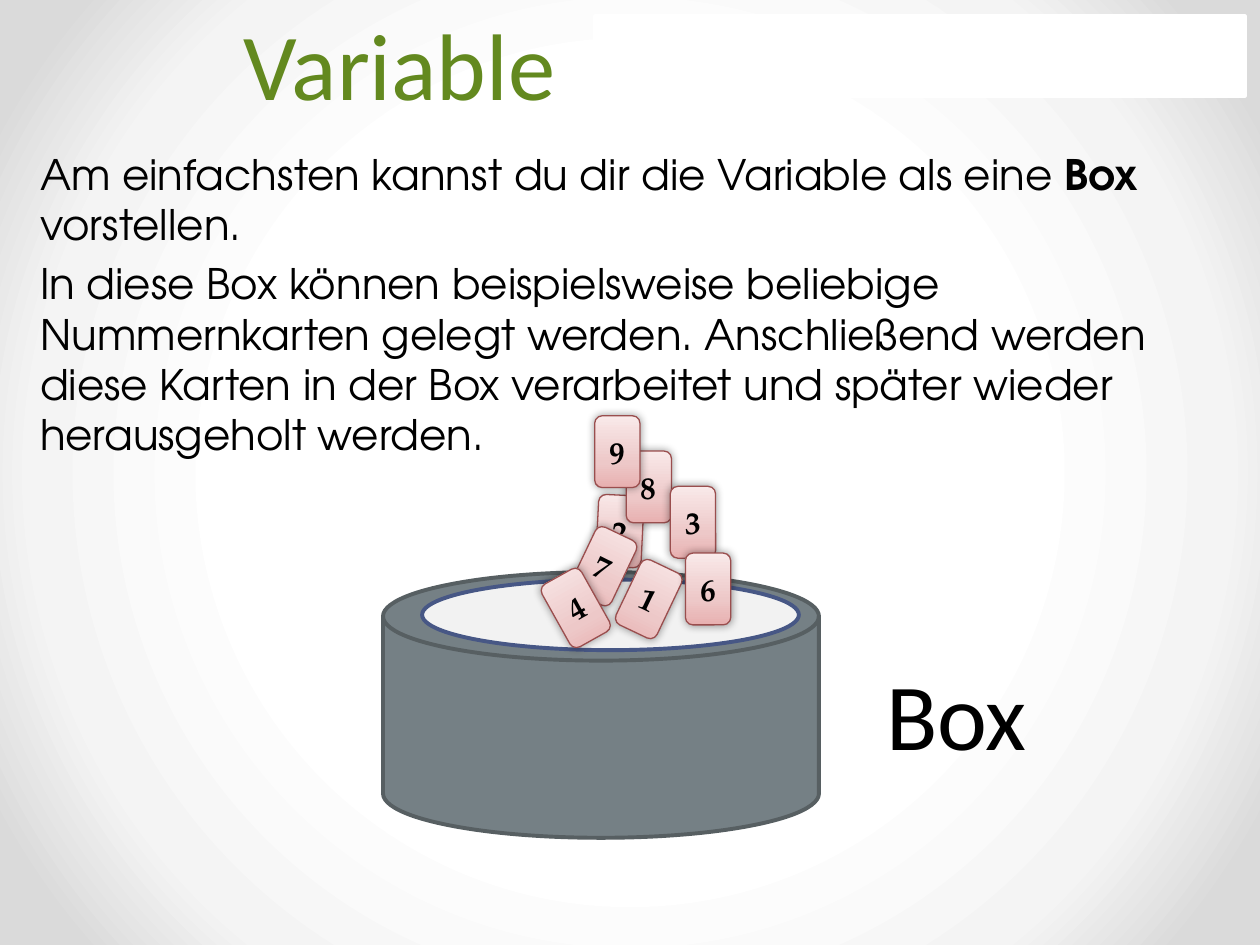
"""Builds a slide that explains a variable as a box of number cards."""
from lxml.etree import SubElement as Sub
from pptx import Presentation
from pptx.dml.color import RGBColor as Rgb
from pptx.enum.shapes import MSO_SHAPE as Form
from pptx.enum.text import MSO_ANCHOR as Anchor, MSO_AUTO_SIZE as Auto, PP_ALIGN as Align
from pptx.oxml.ns import qn
from pptx.util import Inches, Pt

WIDE, HIGH = Inches(10), Inches(7.5)
BLACK, WHITE = Rgb(0, 0, 0), Rgb(255, 255, 255)
GREEN = Rgb(0x63, 0x89, 0x1F)
STEEL, IRON = Rgb(0x75, 0x80, 0x85), Rgb(0x57, 0x5F, 0x62)
PALE, BLUE = Rgb(0xF2, 0xF2, 0xF2), Rgb(0x47, 0x57, 0x85)
ROSE, PINK, BLUSH = Rgb(0xE8, 0xB0, 0xB0), Rgb(0xED, 0xC8, 0xC8), Rgb(0xF9, 0xE9, 0xE9)
WINE = Rgb(0x9A, 0x4E, 0x4E)
MIST, GREY = Rgb(0xF4, 0xF4, 0xF4), Rgb(0xDA, 0xDA, 0xDA)
CARDS = [
    ("2", 47.4, 52.4, 2.8), ("1", 49.7, 59.6, 25.5), ("8", 49.7, 47.73, 0),
    ("3", 53.2, 51.47, 0), ("9", 47.2, 44, 0), ("6", 54.4, 58.53, 0),
    ("7", 46.1, 56.13, 25.5), ("4", 43.9, 60.53, 330.8),
]
STORY = [
    [("Am einfachsten kannst du dir die Variable als eine ", False),
     ("Box", True), (" vorstellen.", False)],
    [("In diese Box können beispielsweise beliebige Nummernkarten gelegt werden. "
      "Anschließend werden diese Karten in der Box verarbeitet und später wieder "
      "herausgeholt werden.", False)],
]


def place(left, top, width, height):
    """Turn percent shares of the slide into lengths."""
    return [int(share * full / 100)
            for share, full in zip((left, top, width, height), (WIDE, HIGH) * 2)]


def style(para, face, size, color, bold=None, align=None):
    """Set the font and alignment of a paragraph."""
    font = para.font
    font.name, font.size, font.bold = face, Pt(size), bold
    font.color.rgb = color
    para.alignment = align


def blend(owner, fill, stops):
    """Give a fill the listed gradient stops and return its element."""
    fill.gradient()
    grad = next(owner.iter(qn("a:gradFill")))
    grad.clear()
    grad.set("rotWithShape", "1")
    row = Sub(grad, qn("a:gsLst"))
    for pos, color in stops:
        stop = Sub(row, qn("a:gs"), pos=str(pos * 1000))
        Sub(stop, qn("a:srgbClr"), val=str(color))
    return grad


def paint(slide):
    """Fill the background with a round gradient."""
    grad = blend(slide._element, slide.background.fill,
                 [(50, WHITE), (76, MIST), (92, GREY)])
    ring = Sub(grad, qn("a:path"), path="circle")
    Sub(ring, qn("a:fillToRect"), dict.fromkeys("ltrb", "50000"))


def shape(slide, form, area, edge, weight, fill=None):
    """Add an outlined preset shape."""
    item = slide.shapes.add_shape(form, *place(*area))
    item.shadow.inherit = False
    item.line.color.rgb, item.line.width = edge, Pt(weight)
    if fill is not None:
        item.fill.solid()
        item.fill.fore_color.rgb = fill
    return item


def label(slide, text, area, color, wrap):
    """Add a large centred word."""
    frame = slide.shapes.add_textbox(*place(*area)).text_frame
    frame.word_wrap, frame.auto_size = wrap, Auto.SHAPE_TO_FIT_TEXT
    para = frame.paragraphs[0]
    para.text = text
    style(para, "Calibri", 54, color, align=Align.CENTER)


def prose(slide, story, area):
    """Add the body text with its bold words."""
    frame = slide.shapes.add_textbox(*place(*area)).text_frame
    frame.word_wrap = True
    for i, parts in enumerate(story):
        para = frame.add_paragraph() if i else frame.paragraphs[0]
        style(para, "TeX Gyre Adventor", 24, BLACK)
        if i:
            para.space_before = Pt(4.8)
        for text, bold in parts:
            run = para.add_run()
            run.text, run.font.bold = text, bold


def card(slide, digit, left, top, turn):
    """Add a glowing number card."""
    item = shape(slide, Form.ROUNDED_RECTANGLE, (left, top, 3.6, 7.6), WINE, 0.75)
    item.rotation = turn
    props = item._element.spPr
    grad = blend(props, item.fill, [(0, ROSE), (35, PINK), (100, BLUSH)])
    Sub(grad, qn("a:lin"), ang="16200000", scaled="1")
    glow = Sub(props.find(qn("a:effectLst")), qn("a:outerShdw"),
               blurRad=str(Pt(5)), dist="0", dir="0", rotWithShape="0")
    tint = Sub(glow, qn("a:srgbClr"), val=str(BLACK))
    Sub(tint, qn("a:alpha"), val="40000")
    frame = item.text_frame
    frame.vertical_anchor = Anchor.MIDDLE
    para = frame.paragraphs[0]
    para.text = digit
    style(para, "TeX Gyre Pagella", 18, BLACK, True, Align.CENTER)


def main():
    """Build and save the slide."""
    deck = Presentation()
    deck.slide_width, deck.slide_height = WIDE, HIGH
    slide = deck.slides.add_slide(deck.slide_layouts[6])
    paint(slide)
    shape(slide, Form.RECTANGLE, (47.2, 1.73, 51.6, 8.4), WHITE, 2.25, WHITE)
    label(slide, "Variable", (18.2, 0, 27, 13.47), GREEN, False)
    prose(slide, STORY, (2.2, 15.07, 93.7, 71.6))
    shape(slide, Form.FLOWCHART_MAGNETIC_DISK, (30.4, 60.53, 34.6, 28.13), IRON, 2.25, STEEL)
    shape(slide, Form.OVAL, (33.5, 61.33, 29.9, 7.47), BLUE, 2.25, PALE)
    label(slide, "Box", (66.6, 68.8, 18.6, 13.47), BLACK, True)
    for entry in CARDS:
        card(slide, *entry)
    deck.save("out.pptx")


if __name__ == "__main__":
    main()
